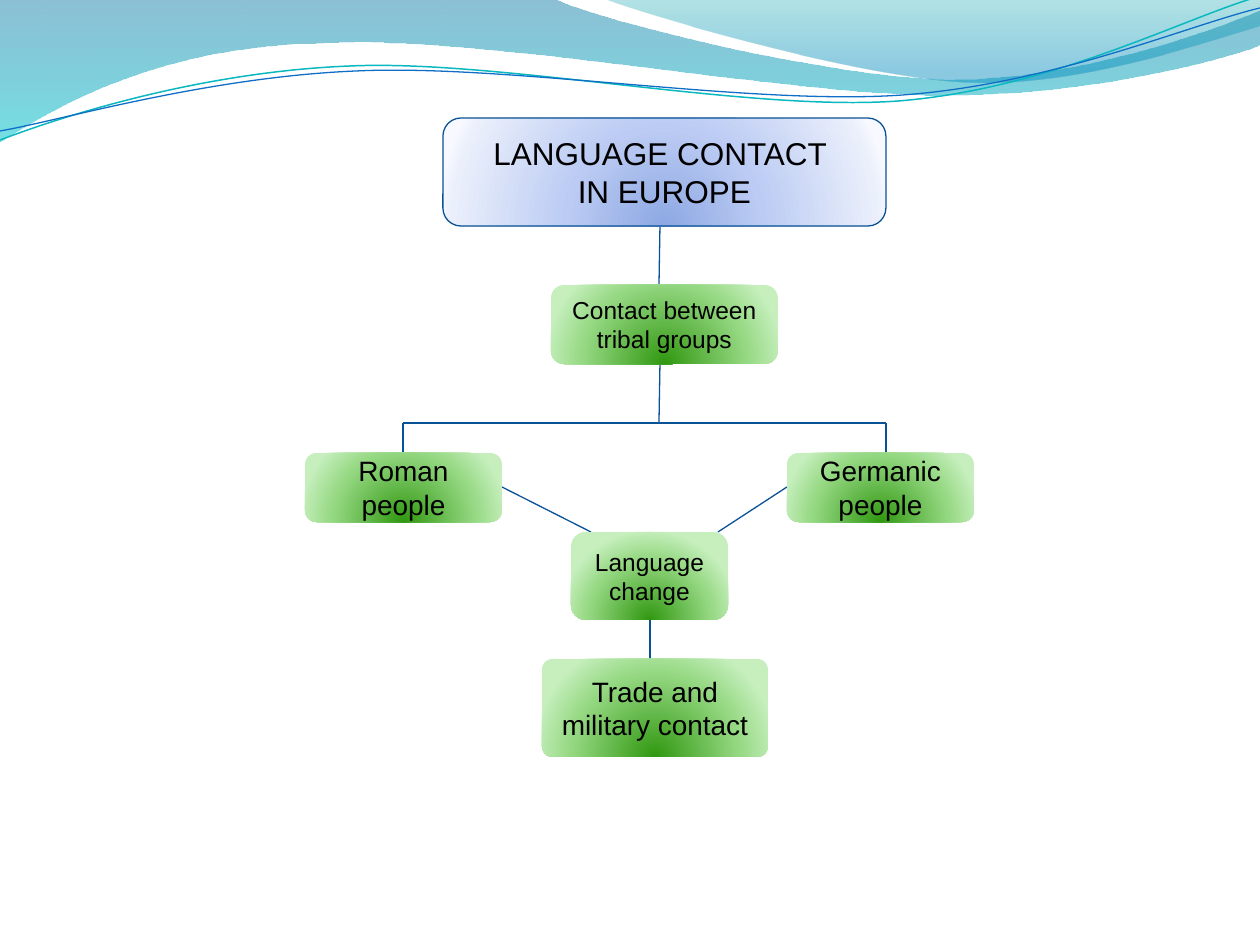
from dataclasses import dataclass
from typing import NamedTuple

import lxml.etree
import pptx
import pptx.dml.color
import pptx.enum.shapes
import pptx.enum.text
import pptx.oxml.ns
import pptx.util

qn = pptx.oxml.ns.qn
EMU_PER_PX = 914400 / 126


class Stop(NamedTuple):
    pos: int
    color: str
    alpha: int = 100


@dataclass(frozen=True)
class Theme:
    font: str = "Arial"
    text: str = "000000"
    line: str = "095295"
    teal: str = "0AB8BF"
    blue: str = "0F6FC6"
    title_size: int = 18
    large: int = 16
    small: int = 14
    line_width: float = 0.75
    title_fill: tuple = (Stop(0, "8DA8E3"), Stop(43, "BBCBF3"), Stop(93, "EAEFFB"), Stop(100, "F7F9FF"))
    node_fill: tuple = (Stop(0, "319811"), Stop(68, "95D882"), Stop(100, "C6EFBD"))
    left_wave: tuple = (Stop(0, "0074A1", 45), Stop(100, "00C6CF", 55))
    right_wave: tuple = (Stop(0, "00A1A9", 30), Stop(80, "008BBF", 45))


THEME = Theme()


class Wave(NamedTuple):
    start: tuple
    steps: tuple
    fill: tuple = ()
    line: str = ""
    width: float = THEME.line_width


class Node(NamedTuple):
    text: str
    left: int
    top: int
    width: int
    height: int
    size: int
    fill: tuple = THEME.node_fill
    line: str = ""
    adj: float = 0.1667


class Link(NamedTuple):
    x1: int
    y1: int
    x2: int
    y2: int


WAVES = (
    Wave((0, 0), (
        (554, -1), (600, 21, 837, 79, 955, 79), (1075, 79, 1207, 33, 1260, 11),
        (1261, 45), (1239, 55, 1096, 96, 940, 95), (784, 95, 481, 35, 324, 43),
        (163, 45, 58, 105, -1, 142)), fill=THEME.left_wave),
    Wave((604, -1), (
        (641, 14, 859, 78, 969, 82), (1079, 87, 1211, 40, 1260, 26), (1260, 0)),
        fill=THEME.right_wave),
    Wave((0, 140), (
        (60, 117, 199, 72, 349, 66), (498, 59, 747, 112, 898, 101),
        (1050, 89, 1182, 19, 1257, -3)), line=THEME.teal, width=0.85),
    Wave((0, 131), (
        (59, 121, 207, 77, 357, 71), (508, 64, 752, 106, 903, 95),
        (1053, 84, 1186, 26, 1260, 8)), line=THEME.blue),
)

NODES = (
    Node("LANGUAGE CONTACT \nIN EUROPE", 443, 118, 443, 108, THEME.title_size,
         THEME.title_fill, THEME.line),
    Node("Contact between tribal groups", 551, 285, 227, 79, THEME.small),
    Node("Roman people", 305, 453, 197, 69, THEME.large),
    Node("Germanic people", 787, 453, 187, 69, THEME.large),
    Node("Language change", 571, 532, 157, 88, THEME.small),
    Node("Trade and military contact", 542, 659, 226, 98, THEME.large, adj=0.108),
)

LINKS = (
    Link(660, 227, 659, 286),
    Link(660, 364, 659, 423),
    Link(659, 423, 403, 423),
    Link(659, 423, 886, 423),
    Link(886, 423, 886, 453),
    Link(403, 423, 403, 453),
    Link(502, 487, 591, 532),
    Link(787, 487, 718, 532),
    Link(650, 620, 650, 659),
)


def px(n: float) -> int:
    return round(n * EMU_PER_PX)


def rgb(color: str):
    return pptx.dml.color.RGBColor.from_string(color)


def set_line(sp, color: str, width: float = THEME.line_width) -> None:
    if color:
        sp.line.color.rgb = rgb(color)
        sp.line.width = pptx.util.Pt(width)
    else:
        sp.line.fill.background()


def set_gradient(sp, stops: tuple, radial: bool = False) -> None:
    sp.fill.gradient()
    grad = sp.element.spPr.find(qn("a:gradFill"))
    for child in list(grad):
        grad.remove(child)
    sub = lxml.etree.SubElement
    gs_lst = sub(grad, qn("a:gsLst"))
    for stop in stops:
        gs = sub(gs_lst, qn("a:gs"), pos=str(stop.pos * 1000))
        clr = sub(gs, qn("a:srgbClr"), val=stop.color)
        if stop.alpha < 100:
            sub(clr, qn("a:alpha"), val=str(stop.alpha * 1000))
    if radial:
        shade = sub(grad, qn("a:path"), path="circle")
        sub(shade, qn("a:fillToRect"), l="50000", t="130000", r="50000", b="-30000")
    else:
        sub(grad, qn("a:lin"), ang="5400000", scaled="0")


def bend_segments(sp, steps: tuple) -> None:
    segments = iter(list(sp.element.spPr.iter(qn("a:lnTo"))))
    for step in steps:
        first = next(segments)
        if len(step) == 6:
            first.tag = qn("a:cubicBezTo")
            for _ in range(2):
                extra = next(segments)
                first.append(extra[0])
                extra.getparent().remove(extra)


def draw_wave(s, wave: Wave) -> None:
    points = [(px(x), px(y)) for step in wave.steps for x, y in zip(step[::2], step[1::2])]
    builder = s.shapes.build_freeform(*map(px, wave.start))
    builder.add_line_segments(points, close=bool(wave.fill))
    sp = builder.convert_to_shape()
    bend_segments(sp, wave.steps)
    sp.shadow.inherit = False
    if wave.fill:
        set_gradient(sp, wave.fill)
    else:
        sp.fill.background()
    set_line(sp, wave.line, wave.width)


def write_text(sp, text: str, *, size: int, color: str = THEME.text, font: str = THEME.font) -> None:
    tf = sp.text_frame
    tf.word_wrap = True
    tf.vertical_anchor = pptx.enum.text.MSO_ANCHOR.MIDDLE
    tf.text = text
    for p in tf.paragraphs:
        p.alignment = pptx.enum.text.PP_ALIGN.CENTER
        for r in p.runs:
            r.font.size = pptx.util.Pt(size)
            r.font.name = font
            r.font.color.rgb = rgb(color)


def draw_node(s, node: Node) -> None:
    shape_type = pptx.enum.shapes.MSO_SHAPE.ROUNDED_RECTANGLE
    sp = s.shapes.add_shape(shape_type, *map(px, node[1:5]))
    sp.adjustments[0] = node.adj
    sp.shadow.inherit = False
    set_gradient(sp, node.fill, radial=True)
    set_line(sp, node.line)
    write_text(sp, node.text, size=node.size)


def draw_link(s, link: Link) -> None:
    sp = s.shapes.add_connector(pptx.enum.shapes.MSO_CONNECTOR.STRAIGHT, *map(px, link))
    set_line(sp, THEME.line)
    lxml.etree.SubElement(sp.element.spPr, qn("a:effectLst"))


def main() -> None:
    prs = pptx.Presentation()
    prs.slide_width, prs.slide_height = px(1260), px(945)
    s = prs.slides.add_slide(prs.slide_layouts[6])
    for wave in WAVES:
        draw_wave(s, wave)
    for link in LINKS:
        draw_link(s, link)
    for node in NODES:
        draw_node(s, node)
    prs.save("out.pptx")


if __name__ == "__main__":
    main()
